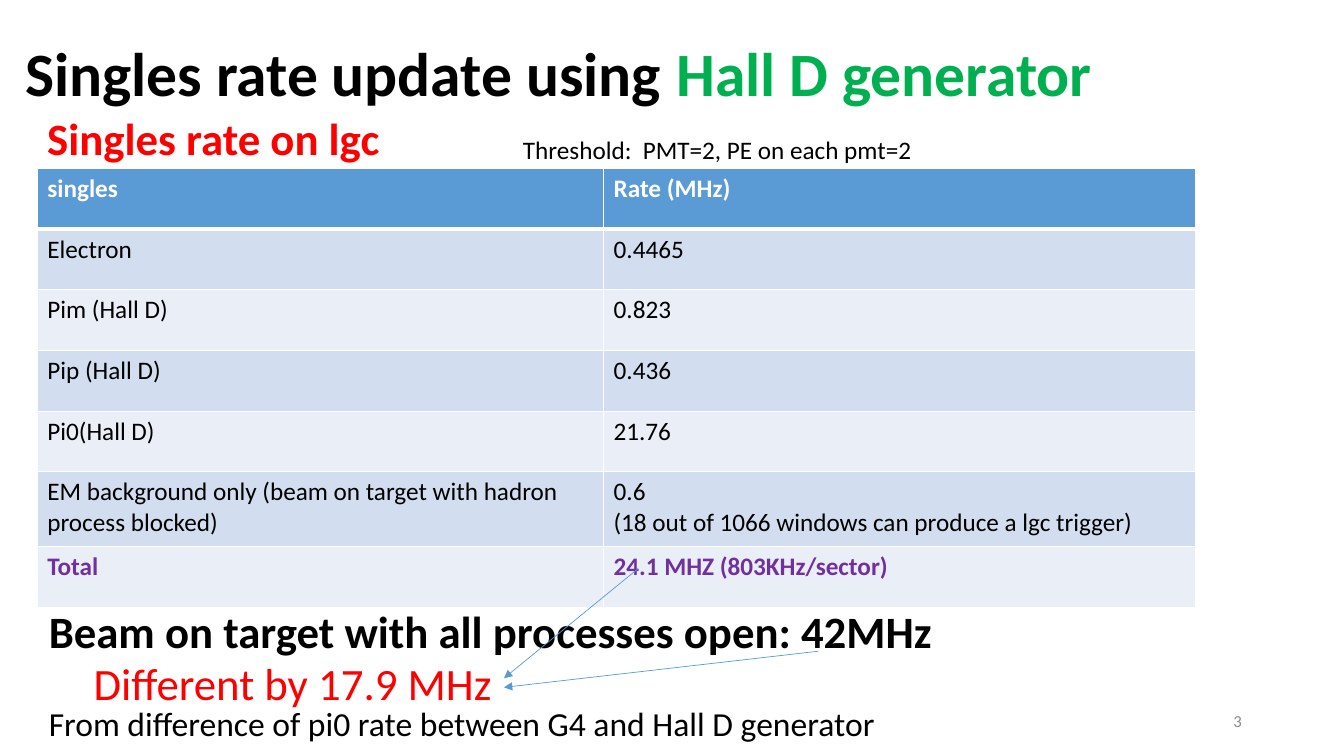
from pptx import Presentation
from pptx.dml.color import RGBColor
from pptx.enum import shapes, text
from pptx.oxml import parse_xml
from pptx.oxml.ns import nsdecls
from pptx.util import Cm, Pt

BLACK = RGBColor(0x00, 0x00, 0x00)
WHITE = RGBColor(0xFF, 0xFF, 0xFF)
RED = RGBColor(0xFF, 0x00, 0x00)
GREEN = RGBColor(0x00, 0xB0, 0x50)
PURPLE = RGBColor(0x70, 0x30, 0xA0)
GRAY = RGBColor(0x8C, 0x8C, 0x8C)
BLUE = RGBColor(0x5B, 0x9B, 0xD5)
BANDS = RGBColor(0xEA, 0xEF, 0xF7), RGBColor(0xD2, 0xDE, 0xEF)

RATES = [
    ("singles", "Rate (MHz)"),
    ("Electron", "0.4465"),
    ("Pim (Hall D)", "0.823"),
    ("Pip (Hall D)", "0.436"),
    ("Pi0(Hall D)", "21.76"),
    ("EM background only (beam on target with hadron process blocked)",
     "0.6\n(18 out of 1066 windows can produce a lgc trigger)"),
    ("Total", "24.1 MHZ (803KHz/sector)"),
]
WIDTHS = 14.27, 14.91
HEIGHTS = [1.53] * 5 + [1.88, 1.53]


class Deck:
    face = "Calibri"

    def __init__(self):
        self.prs = Presentation()
        self.prs.slide_width, self.prs.slide_height = Cm(33.87), Cm(19.05)
        self.slide = self.prs.slides.add_slide(self.prs.slide_layouts[5])

    def style(self, frame, size, color, bold=False):
        for par in frame.paragraphs:
            font = par.font
            font.name, font.size, font.bold = self.face, Pt(size), bold
            font.color.rgb = color

    def title(self, box, parts):
        shape = self.slide.shapes.title
        shape.left, shape.top, shape.width, shape.height = map(Cm, box)
        frame = shape.text_frame
        frame.word_wrap = True
        frame.auto_size = text.MSO_AUTO_SIZE.NONE
        frame.vertical_anchor = text.MSO_ANCHOR.MIDDLE
        par = frame.paragraphs[0]
        par.alignment = text.PP_ALIGN.LEFT
        par.line_spacing = 0.9
        self.style(frame, 44, BLACK, True)
        for words, color in parts:
            run = par.add_run()
            run.text = words
            run.font.color.rgb = color

    def label(self, box, words, size, color, bold=False):
        frame = self.slide.shapes.add_textbox(*map(Cm, box)).text_frame
        frame.text = words
        self.style(frame, size, color, bold)
        return frame

    def edge(self, cell, side, width):
        cell._tc.get_or_add_tcPr().append(parse_xml(
            f'<a:ln{side} {nsdecls("a")} w="{Pt(width)}"><a:solidFill>'
            f'<a:srgbClr val="{WHITE}"/></a:solidFill></a:ln{side}>'))

    def table(self, left, top):
        grid = self.slide.shapes.add_table(
            len(RATES), len(WIDTHS), Cm(left), Cm(top),
            Cm(sum(WIDTHS)), Cm(sum(HEIGHTS))).table
        for col, width in zip(grid.columns, WIDTHS):
            col.width = Cm(width)
        last = len(RATES) - 1
        for i, (row, words) in enumerate(zip(grid.rows, RATES)):
            row.height = Cm(HEIGHTS[i])
            color = {0: WHITE, last: PURPLE}.get(i, BLACK)
            for cell, word in zip(row.cells, words):
                cell.text = word
                self.style(cell.text_frame, 18, color, i in (0, last))
                for side in "LRTB":
                    thick = (i, side) in ((0, "B"), (1, "T"))
                    self.edge(cell, side, 3 if thick else 1)
                cell.fill.solid()
                cell.fill.fore_color.rgb = BANDS[i % 2] if i else BLUE

    def arrow(self, *ends):
        link = self.slide.shapes.add_connector(
            shapes.MSO_CONNECTOR.STRAIGHT, *map(Cm, ends))
        link.line.color.rgb = BLUE
        link.line.width = Pt(0.5)
        link.line._get_or_add_ln().append(
            parse_xml(f'<a:tailEnd {nsdecls("a")} type="triangle"/>'))
        link._element.spPr.append(
            parse_xml(f'<a:effectLst {nsdecls("a")}/>'))


def main():
    deck = Deck()
    deck.title((0.38, 0.08, 30.76, 3.68),
               [("Singles rate update using ", BLACK),
                ("Hall D generator", GREEN)])
    deck.table(0.94, 4.24)
    deck.label((0.94, 2.67, 8.97, 1.62), "Singles rate on lgc", 32, RED, True)
    page = deck.label((23.93, 17.65, 7.62, 1.02), "3", 12, GRAY)
    page.vertical_anchor = text.MSO_ANCHOR.MIDDLE
    page.paragraphs[0].alignment = text.PP_ALIGN.RIGHT
    page.word_wrap = True
    deck.label((0.98, 15.09, 23.88, 1.62),
               "Beam on target with all processes open: 42MHz",
               32, BLACK, True)
    deck.arrow(16.08, 14.33, 12.7, 17.09)
    deck.arrow(20.62, 16.41, 12.7, 17.32)
    deck.label((2.11, 16.41, 10.67, 1.62), "Different by 17.9 MHz", 32, RED)
    deck.label((0.98, 17.6, 22.12, 1.27),
               "From difference of pi0 rate between G4 and Hall D generator",
               24, BLACK)
    deck.label((12.93, 3.25, 10.41, 1.02),
               "Threshold:  PMT=2, PE on each pmt=2", 18, BLACK)
    deck.prs.save("out.pptx")


if __name__ == "__main__":
    main()
